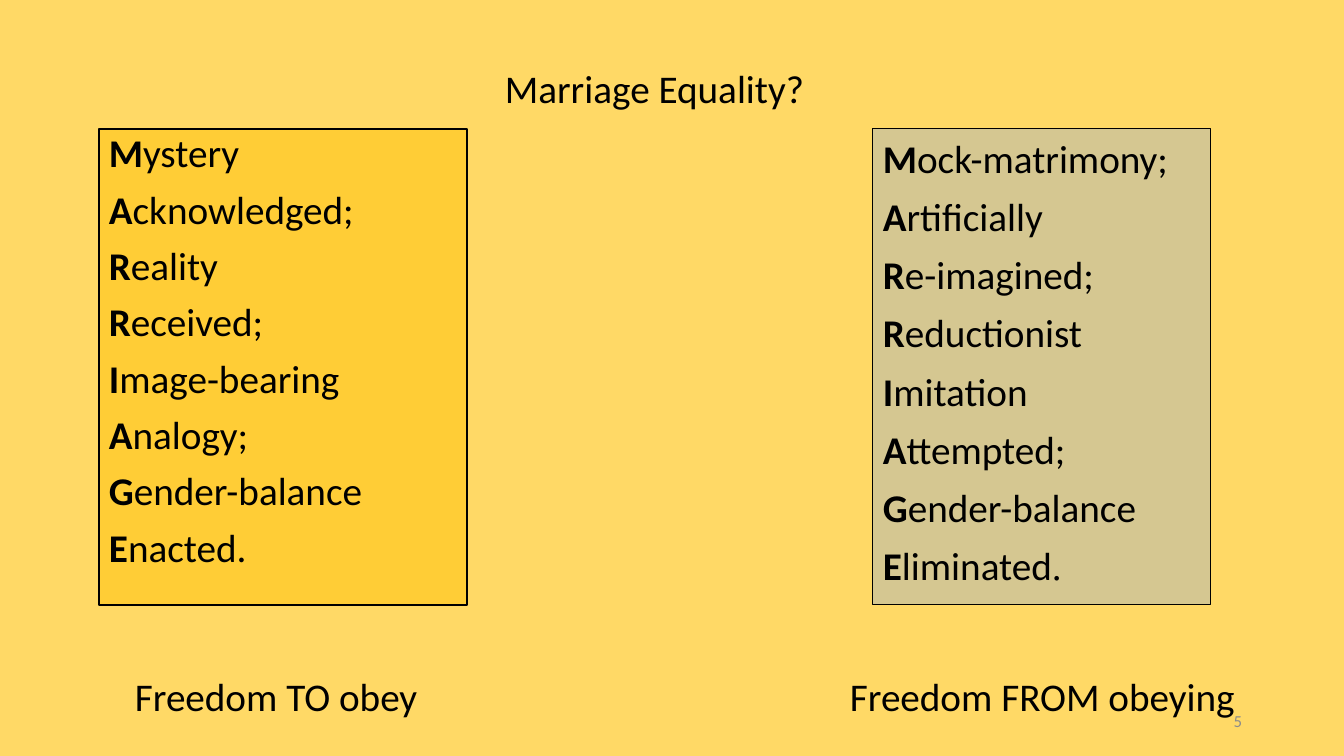
from lxml.etree import SubElement
from pptx import Presentation
from pptx.dml.color import RGBColor
from pptx.enum.shapes import MSO_SHAPE as Shape
from pptx.enum.text import MSO_ANCHOR as Anchor, PP_ALIGN as Align
from pptx.oxml.ns import qn
from pptx.util import Pt

TITLE = "Marriage Equality?"
MYSTERY = ["Mystery", "Acknowledged;", "Reality", "Received;", "Image-bearing",
           "Analogy;", "Gender-balance", "Enacted."]
MOCKERY = ["Mock-matrimony;", "Artificially", "Re-imagined;", "Reductionist",
           "Imitation", "Attempted;", "Gender-balance", "Eliminated."]
FREEDOMS = [("Freedom TO obey", 125), ("Freedom FROM obeying", 840)]
PAGE = "5"

COLORS = {"background": "FFD966", "gold": "FFC000", "blue": "8FAADC",
          "ink": "000000", "page": "8C8C8C"}
FONT, STOP_FONT = "Calibri", "Times New Roman"
EMU_PER_PX = 914400 / 100.8

PANEL_TOP, PANEL_HEIGHT = 129, 476
FREEDOM_TOP, FREEDOM_WIDTH, LABEL_HEIGHT = 667, 414, 57


def px(length):
    return round(length * EMU_PER_PX)


def color(name):
    return RGBColor.from_string(COLORS[name])


def write(paragraph, text, size=28, ink="ink", bold=False, font=FONT):
    run = paragraph.add_run()
    run.text = text
    run.font.size, run.font.name, run.font.bold = Pt(size), font, bold
    run.font.color.rgb = color(ink)


def add_label(slide, box, text, align=Align.LEFT, anchor=Anchor.TOP, **style):
    frame = slide.shapes.add_textbox(*map(px, box)).text_frame
    frame.word_wrap = True
    frame.vertical_anchor = anchor
    paragraph = frame.paragraphs[0]
    paragraph.alignment = align
    write(paragraph, text, **style)


def add_acrostic(slide, words, left, width, fill, opacity, border,
                 stop_font=FONT, **spacing):
    """Draw a panel of words with bold initials; stop_font sets the full stop."""
    panel = slide.shapes.add_shape(
        Shape.RECTANGLE, *map(px, (left, PANEL_TOP, width, PANEL_HEIGHT)))
    panel.shadow.inherit = False
    panel.fill.solid()
    panel.fill.fore_color.rgb = color(fill)
    tint = panel.fill._xPr.find(qn("a:solidFill"))[0]
    SubElement(tint, qn("a:alpha"), val=str(opacity * 1000))
    panel.line.color.rgb = color("ink")
    panel.line.width = Pt(border)

    frame = panel.text_frame
    frame.word_wrap = True
    frame.vertical_anchor = Anchor.TOP
    for i, word in enumerate(words):
        paragraph = frame.add_paragraph() if i else frame.paragraphs[0]
        paragraph.alignment = Align.LEFT
        for name, value in spacing.items():
            setattr(paragraph, name, value)
        write(paragraph, word[0], bold=True)
        write(paragraph, word[1:].rstrip("."))
        if word.endswith("."):
            write(paragraph, ".", font=stop_font)


def main():
    deck = Presentation()
    deck.slide_width, deck.slide_height = px(1344), px(756)
    slide = deck.slides.add_slide(deck.slide_layouts[6])
    slide.background.fill.solid()
    slide.background.fill.fore_color.rgb = color("background")

    add_acrostic(slide, MYSTERY, 99, 368, "gold", 47, 1,
                 line_spacing=0.9, space_before=Pt(10))
    add_acrostic(slide, MOCKERY, 873, 338, "blue", 37, 0.75,
                 stop_font=STOP_FONT, space_after=Pt(8))
    add_label(slide, (495, 59, 378, LABEL_HEIGHT), TITLE)
    for freedom, left in FREEDOMS:
        add_label(slide, (left, FREEDOM_TOP, FREEDOM_WIDTH, LABEL_HEIGHT), freedom)
    add_label(slide, (950, 701, 302, 40), PAGE, align=Align.RIGHT,
              anchor=Anchor.MIDDLE, size=12, ink="page")
    deck.save("out.pptx")


if __name__ == "__main__":
    main()
